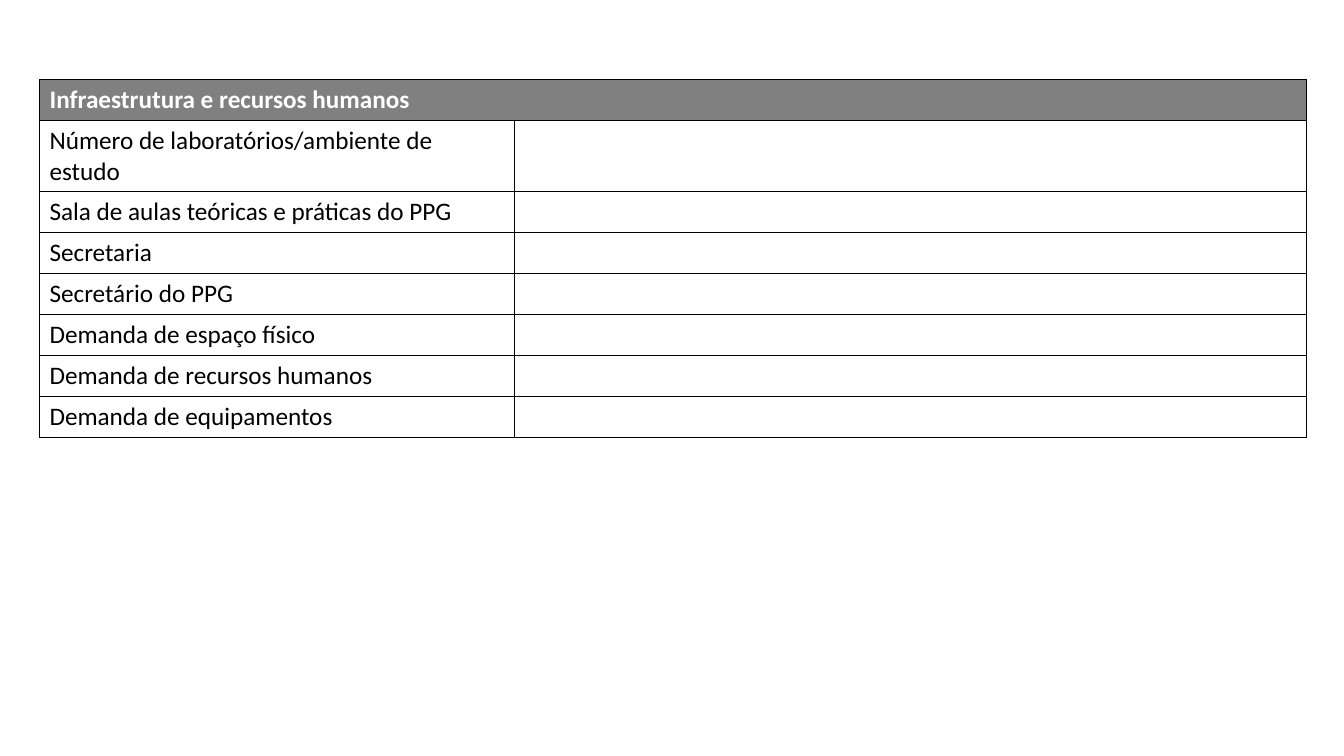
from lxml import etree
from pptx import Presentation
from pptx.dml.color import RGBColor
from pptx.oxml.ns import qn
from pptx.util import Pt

BLACK = RGBColor(0x00, 0x00, 0x00)
WHITE = RGBColor(0xFF, 0xFF, 0xFF)
GRAY = RGBColor(0x80, 0x80, 0x80)
BLANK_LAYOUT = 6
FONT = "Calibri"
HEADING = "Infraestrutura e recursos humanos"
ITEMS = [
    "Número de laboratórios/ambiente de estudo",
    "Sala de aulas teóricas e práticas do PPG",
    "Secretaria",
    "Secretário do PPG",
    "Demanda de espaço físico",
    "Demanda de recursos humanos",
    "Demanda de equipamentos",
]


def set_borders(cell, color, width):
    tc_pr = cell._tc.get_or_add_tcPr()
    for i, side in enumerate(("lnL", "lnR", "lnT", "lnB")):
        ln = etree.Element(qn(f"a:{side}"), w=str(Pt(width)))
        fill = etree.SubElement(ln, qn("a:solidFill"))
        etree.SubElement(fill, qn("a:srgbClr"), val=str(color))
        tc_pr.insert(i, ln)


def format_cell(cell, is_header):
    if is_header:
        cell.fill.solid()
        cell.fill.fore_color.rgb = GRAY
    else:
        cell.fill.background()
    set_borders(cell, BLACK, 1)
    font = cell.text_frame.paragraphs[0].font
    font.name = FONT
    font.size = Pt(18)
    font.bold = is_header
    font.color.rgb = WHITE if is_header else BLACK


def add_resources_table(slide, left, top, width, row_height):
    rows = len(ITEMS) + 1
    table = slide.shapes.add_table(
        rows, 2, Pt(left), Pt(top), Pt(width), Pt(row_height * rows)
    ).table
    table.horz_banding = False
    for column, share in zip(table.columns, (0.375, 0.625)):
        column.width = Pt(width * share)
    for i, label in enumerate([HEADING] + ITEMS):
        table.rows[i].height = Pt(row_height)
        table.cell(i, 0).text = label
        for j in range(2):
            format_cell(table.cell(i, j), i == 0)
    table.cell(0, 0).merge(table.cell(0, 1))


def main():
    prs = Presentation()
    prs.slide_width = Pt(960)
    prs.slide_height = Pt(540)
    slide = prs.slides.add_slide(prs.slide_layouts[BLANK_LAYOUT])
    add_resources_table(slide, 28.2, 56.7, 905, 29.2)
    prs.save("out.pptx")


if __name__ == "__main__":
    main()
